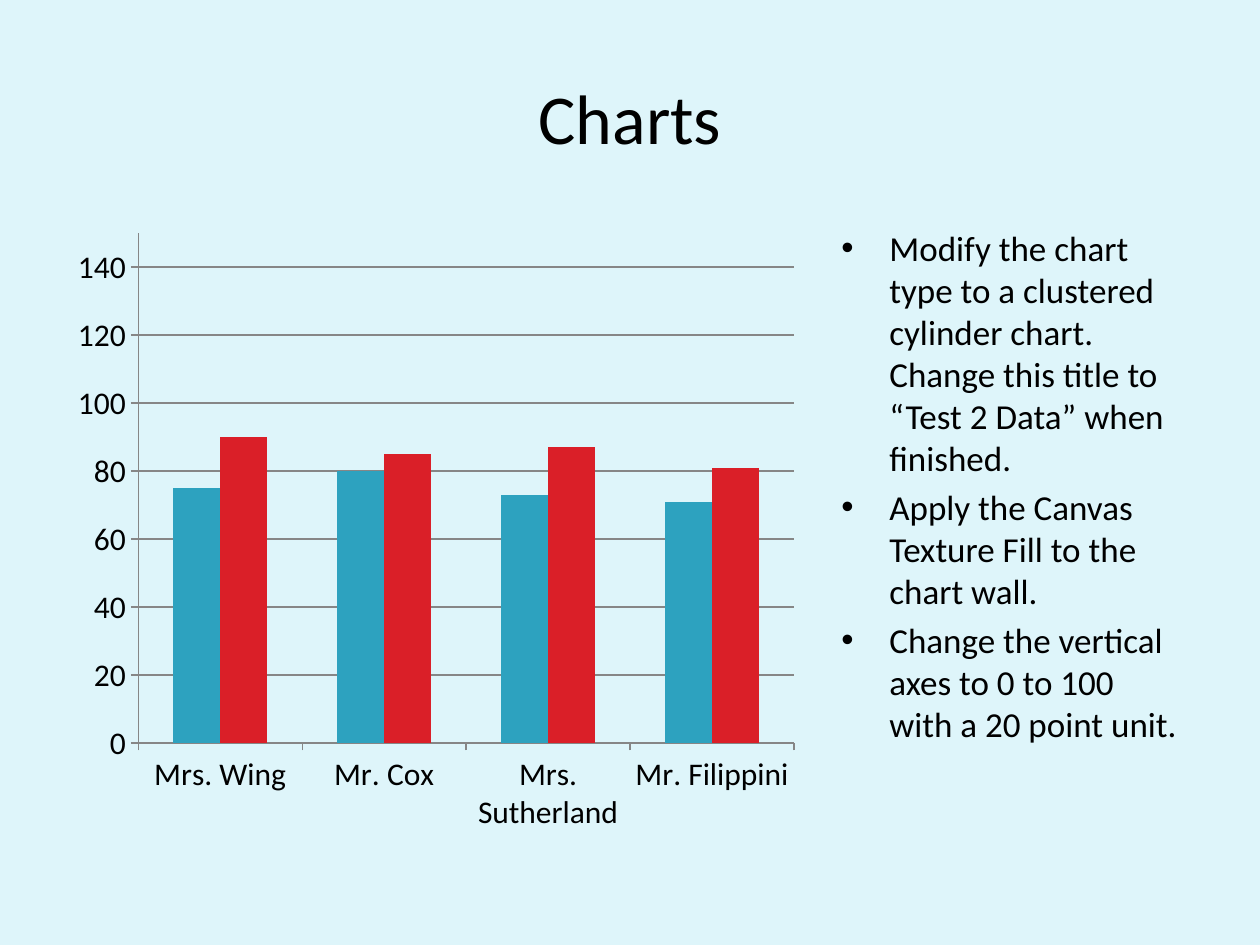
from dataclasses import dataclass

from lxml import etree
from pptx import Presentation
from pptx.chart.data import CategoryChartData
from pptx.dml.color import RGBColor
from pptx.enum.chart import XL_CHART_TYPE, XL_TICK_MARK
from pptx.enum.text import MSO_ANCHOR, PP_ALIGN
from pptx.oxml.ns import qn
from pptx.slide import Slide
from pptx.util import Pt

PX = 9144  # EMU per px, 100 px to the inch
FONT = "Calibri"
BLACK = RGBColor(0x00, 0x00, 0x00)
PALE_BLUE = RGBColor(0xDE, 0xF5, 0xFA)
TEAL = RGBColor(0x2D, 0xA2, 0xBF)
RED = RGBColor(0xDA, 0x1F, 0x28)
GREY = RGBColor(0x86, 0x86, 0x86)


@dataclass(frozen=True)
class Box:
    left: int
    top: int
    width: int
    height: int

    def emu(self) -> tuple[int, int, int, int]:
        return self.left * PX, self.top * PX, self.width * PX, self.height * PX


@dataclass(frozen=True)
class ScoreSeries:
    name: str
    scores: tuple[int, ...]
    color: RGBColor


TITLE_BOX = Box(50, 30, 900, 125)
CHART_BOX = Box(50, 175, 592, 495)
TASKS_BOX = Box(658, 175, 292, 495)
BULLET_INDENT = 38

TEACHERS = ("Mrs. Wing", "Mr. Cox", "Mrs. Sutherland", "Mr. Filippini")
SERIES = (
    ScoreSeries("Series 1", (75, 80, 73, 71), TEAL),
    ScoreSeries("Series 2", (90, 85, 87, 81), RED),
)
TASKS = (
    "Modify the chart type to a clustered cylinder chart. "
    "Change this title to “Test 2 Data” when finished.",
    "Apply the Canvas Texture Fill to the chart wall.",
    "Change the vertical axes to 0 to 100 with a 20 point unit.",
)


def style_font(font, size: int) -> None:
    font.name = FONT
    font.size = Pt(size)
    font.color.rgb = BLACK


def add_title(slide: Slide, text: str) -> None:
    title = slide.shapes.title
    title.left, title.top, title.width, title.height = TITLE_BOX.emu()
    frame = title.text_frame
    frame.text = text
    frame.vertical_anchor = MSO_ANCHOR.MIDDLE
    heading = frame.paragraphs[0]
    heading.alignment = PP_ALIGN.CENTER
    style_font(heading.runs[0].font, 40)


def add_score_chart(slide: Slide) -> None:
    data = CategoryChartData()
    data.categories = TEACHERS
    for series in SERIES:
        data.add_series(series.name, series.scores)
    chart = slide.shapes.add_chart(
        XL_CHART_TYPE.COLUMN_CLUSTERED, *CHART_BOX.emu(), data
    ).chart
    chart.has_legend = False
    chart.has_title = False
    style_font(chart.font, 18)

    # Columns
    plot = chart.plots[0]
    plot.vary_by_categories = False
    plot.gap_width = 150
    plot.overlap = 0
    for columns, series in zip(plot.series, SERIES):
        columns.format.fill.solid()
        columns.format.fill.fore_color.rgb = series.color
        columns.invert_if_negative = False

    # Axes and gridlines
    scores = chart.value_axis
    scores.minimum_scale, scores.maximum_scale, scores.major_unit = 0, 150, 20
    scores.has_major_gridlines = True
    for axis in (chart.category_axis, scores):
        axis.major_tick_mark = XL_TICK_MARK.OUTSIDE
        axis.minor_tick_mark = XL_TICK_MARK.NONE
    for line in (
        chart.category_axis.format.line,
        scores.format.line,
        scores.major_gridlines.format.line,
    ):
        line.color.rgb = GREY
        line.width = Pt(0.75)


def add_tasks(slide: Slide) -> None:
    frame = slide.shapes.add_textbox(*TASKS_BOX.emu()).text_frame
    frame.word_wrap = True
    frame.text = "\n".join(TASKS)
    for task in frame.paragraphs:
        task.space_before = Pt(4)
        style_font(task.runs[0].font, 20)
        # Hanging bullet
        properties = task._p.get_or_add_pPr()
        properties.set("marL", str(BULLET_INDENT * PX))
        properties.set("indent", str(-BULLET_INDENT * PX))
        etree.SubElement(properties, qn("a:buFont")).set("typeface", "Arial")
        etree.SubElement(properties, qn("a:buChar")).set("char", "•")


def main() -> None:
    deck = Presentation()
    deck.slide_width, deck.slide_height = 1000 * PX, 750 * PX
    slide = deck.slides.add_slide(deck.slide_layouts[5])
    slide.background.fill.solid()
    slide.background.fill.fore_color.rgb = PALE_BLUE

    add_title(slide, "Charts")
    add_score_chart(slide)
    add_tasks(slide)
    deck.save("out.pptx")


if __name__ == "__main__":
    main()
